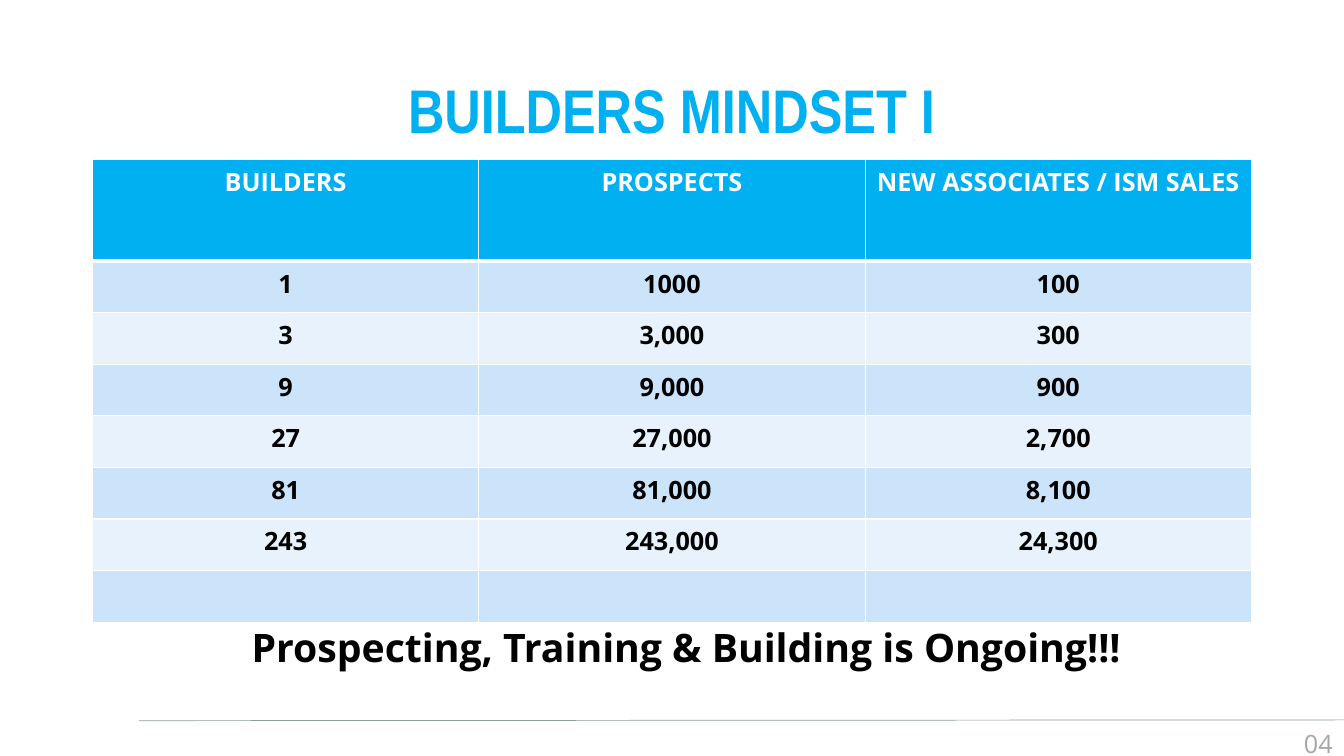
from lxml.etree import SubElement
from pptx import Presentation
from pptx.dml.color import RGBColor
from pptx.enum.shapes import MSO_CONNECTOR
from pptx.enum.text import MSO_ANCHOR, PP_ALIGN
from pptx.oxml.ns import qn
from pptx.util import Cm, Pt

COLORS = {
    "accent": "00B0F0",
    "white": "FFFFFF",
    "black": "000000",
    "band_dark": "CCE4F9",
    "band_light": "E7F2FC",
    "rule": "909C9C",
    "number": "A6A6A6",
}
HEADINGS = ("BUILDERS", "PROSPECTS", "NEW ASSOCIATES / ISM SALES")
GROWTH = (
    ("1", "1000", "100"),
    ("3", "3,000", "300"),
    ("9", "9,000", "900"),
    ("27", "27,000", "2,700"),
    ("81", "81,000", "8,100"),
    ("243", "243,000", "24,300"),
    ("", "", ""),
)


def rgb(name):
    return RGBColor.from_string(COLORS[name])


class SlideBuilder:
    body_font = "Open Sans"
    title_font = "Arial Narrow"

    def __init__(self, slide):
        self.slide = slide

    def style(self, paragraph, size, color, bold=True, font=body_font,
              align=PP_ALIGN.CENTER):
        paragraph.alignment = align
        paragraph.font.name = font
        paragraph.font.size = Pt(size)
        paragraph.font.bold = bold
        paragraph.font.color.rgb = rgb(color)

    def text(self, content, left, top, width, height, size, color,
             anchor=MSO_ANCHOR.TOP, **style):
        shape = self.slide.shapes.add_textbox(
            Cm(left), Cm(top), Cm(width), Cm(height))
        frame = shape.text_frame
        frame.word_wrap = True
        frame.vertical_anchor = anchor
        paragraph = frame.paragraphs[0]
        paragraph.text = content
        self.style(paragraph, size, color, **style)
        return paragraph

    def line(self, start, end, color, width):
        connector = self.slide.shapes.add_connector(
            MSO_CONNECTOR.STRAIGHT, *map(Cm, start + end))
        connector.line.color.rgb = rgb(color)
        connector.line.width = Pt(width)
        SubElement(connector._element.spPr, qn("a:effectLst"))

    def borders(self, cell, **widths):
        properties = cell._tc.get_or_add_tcPr()
        for side in "LRTB":
            width = Pt(widths.get(side, 1))
            border = SubElement(properties, qn(f"a:ln{side}"), w=str(width))
            fill = SubElement(border, qn("a:solidFill"))
            SubElement(fill, qn("a:srgbClr"), val=COLORS["white"])

    def cell(self, cell, content, fill, color, **border_widths):
        self.borders(cell, **border_widths)
        cell.fill.solid()
        cell.fill.fore_color.rgb = rgb(fill)
        cell.text = content
        self.style(cell.text_frame.paragraphs[0], 18, color)

    def table(self, headings, rows, left, top, width, header_height, row_height):
        height = header_height + row_height * len(rows)
        table = self.slide.shapes.add_table(
            len(rows) + 1, len(headings),
            Cm(left), Cm(top), Cm(width), Cm(height)).table
        for row in table.rows:
            row.height = Cm(row_height)
        table.rows[0].height = Cm(header_height)

        for column, heading in enumerate(headings):
            self.cell(table.cell(0, column), heading, "accent", "white", B=3)
        for index, row in enumerate(rows, start=1):
            band = "band_dark" if index % 2 else "band_light"
            top_width = 3 if index == 1 else 1
            for column, content in enumerate(row):
                self.cell(table.cell(index, column), content, band, "black",
                          T=top_width)


def main():
    presentation = Presentation()
    presentation.slide_width = Cm(33.87)
    presentation.slide_height = Cm(19.05)
    builder = SlideBuilder(
        presentation.slides.add_slide(presentation.slide_layouts[6]))

    # Footer rule
    builder.line((3.5, 18.16), (33.87, 18.14), "rule", 0.5)

    # Title
    title = builder.text("BUILDERS MINDSET I", 2.33, 1.02, 29.21, 3.68, 44,
                         "accent", anchor=MSO_ANCHOR.MIDDLE,
                         font=builder.title_font)
    title.line_spacing = 0.9

    # Growth table
    builder.table(HEADINGS, GROWTH, 2.33, 4.02, 29.21, 2.56, 1.3)

    # Closing message and slide number
    builder.text("Prospecting, Training & Building is Ongoing!!!",
                 2.33, 15.57, 29.92, 1.45, 28, "black")
    builder.text("04", 32.61, 18.24, 1.25, 1.02, 18, "number",
                 bold=False, align=PP_ALIGN.LEFT)

    presentation.save("out.pptx")


if __name__ == "__main__":
    main()
